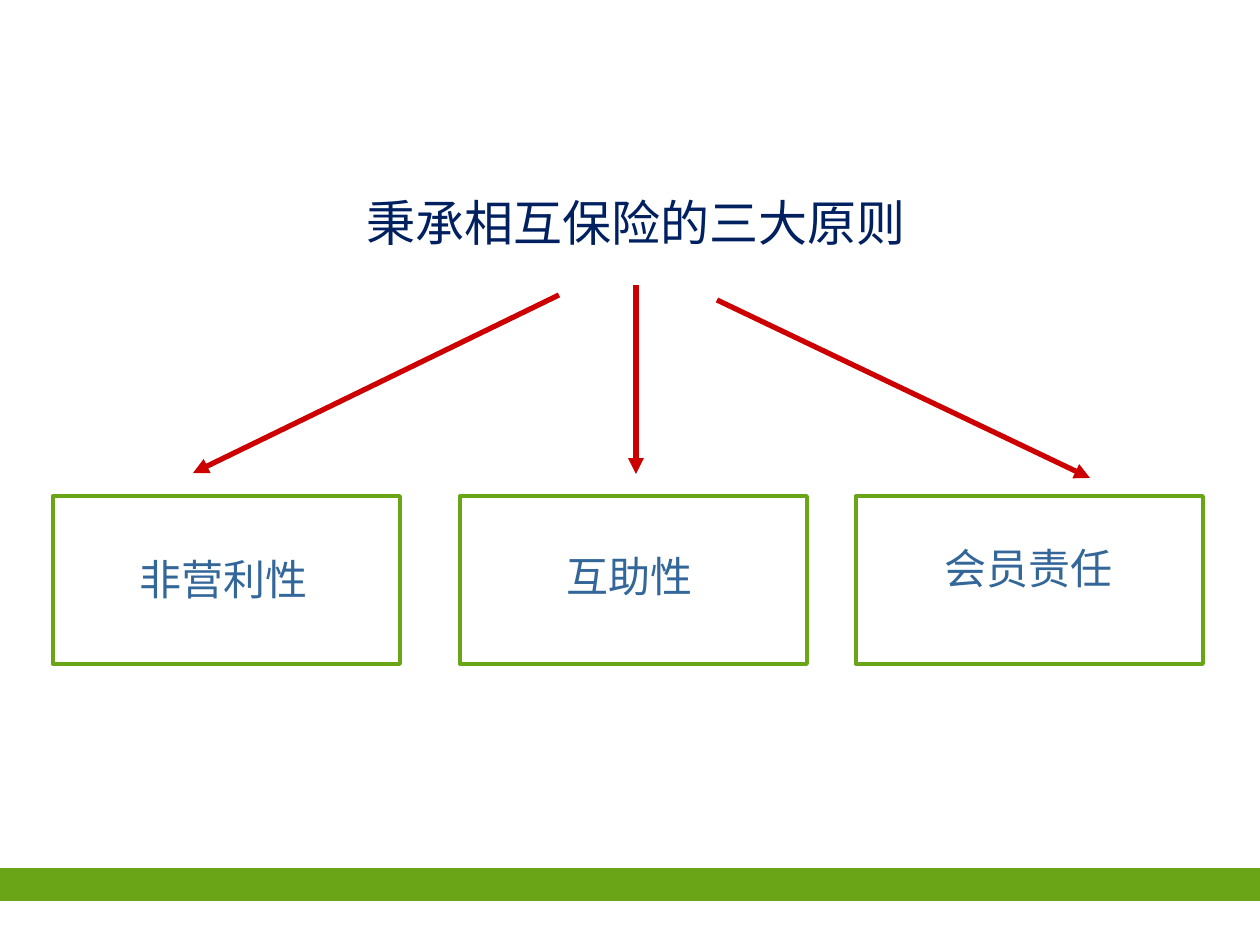
from dataclasses import dataclass

from lxml.etree import SubElement
from pptx import Presentation
from pptx.dml.color import RGBColor as RGB
from pptx.enum.shapes import MSO_CONNECTOR as Connector, MSO_SHAPE as Shape
from pptx.enum.text import MSO_ANCHOR as Anchor, MSO_AUTO_SIZE as AutoSize, PP_ALIGN as Align
from pptx.oxml.ns import qn
from pptx.util import Emu, Pt

PX = 914400 / 126


@dataclass(frozen=True)
class Theme:
    green: RGB = RGB(0x6A, 0xA5, 0x17)
    red: RGB = RGB(0xCC, 0x00, 0x00)
    navy: RGB = RGB(0x00, 0x20, 0x60)
    blue: RGB = RGB(0x33, 0x66, 0x99)
    font: str = "Noto Sans CJK SC"
    title_size: Pt = Pt(28)
    label_size: Pt = Pt(24)
    border: Pt = Pt(2.25)
    arrow: Pt = Pt(3)


THEME = Theme()

SLIDE_SIZE = (1260, 945)
TITLE_BOX = (141, 186, 990, 105)
FOOTER_BOX = (0, 868, 1260, 33)
CARD_TOP, CARD_WIDTH, CARD_HEIGHT = 496, 347, 168

# Card left edge, name, then the label's box relative to its card.
PRINCIPLES = [
    (53, "非营利性", (-3, 51, 347, 63), Align.CENTER),
    (460, "互助性", (94, 48, 262, 63), Align.LEFT),
    (856, "会员责任", (-16, 40, 378, 116), Align.CENTER),
]
ARROWS = [
    ((559, 295), (193, 473)),
    ((636, 285), (636, 474)),
    ((717, 300), (1090, 478)),
]


def emu(*lengths):
    return [Emu(round(length * PX)) for length in lengths]


def write(frame, text, size, color, align):
    """Fill a text frame with one top-anchored line, in the theme font for all scripts."""
    frame.text = text
    frame_format = {"word_wrap": True, "auto_size": AutoSize.NONE,
                    "vertical_anchor": Anchor.TOP}
    for name, value in frame_format.items():
        setattr(frame, name, value)
    paragraph = frame.paragraphs[0]
    paragraph.alignment = align
    run = paragraph.runs[0]
    for name, value in {"name": THEME.font, "size": size, "bold": False}.items():
        setattr(run.font, name, value)
    run.font.color.rgb = color
    SubElement(run.font._element, qn("a:ea"), typeface=THEME.font)


def add_title(slide, box):
    title = slide.shapes.title
    for name, value in zip(("left", "top", "width", "height"), emu(*box)):
        setattr(title, name, value)
    write(title.text_frame, "秉承相互保险的三大原则", THEME.title_size, THEME.navy, Align.CENTER)


def add_footer(slide, box):
    band = slide.shapes.add_shape(Shape.RECTANGLE, *emu(*box))
    band.shadow.inherit = False
    band.fill.solid()
    band.fill.fore_color.rgb = THEME.green
    band.line.fill.background()


def add_principle(slide, box, name, label_box, align):
    left, top, _, _ = box
    label_left, label_top, label_width, label_height = label_box
    card = slide.shapes.add_group_shape().shapes
    label = card.add_textbox(
        *emu(left + label_left, top + label_top, label_width, label_height))
    write(label.text_frame, name, THEME.label_size, THEME.blue, align)
    border = card.add_shape(Shape.RECTANGLE, *emu(*box))
    border.shadow.inherit = False
    border.fill.background()
    border.line.color.rgb = THEME.green
    border.line.width = THEME.border


def add_arrow(slide, start, end):
    arrow = slide.shapes.add_connector(Connector.STRAIGHT, *emu(*start, *end))
    arrow.line.color.rgb = THEME.red
    arrow.line.width = THEME.arrow
    SubElement(arrow.line._get_or_add_ln(), qn("a:tailEnd"), type="triangle")
    SubElement(arrow._element.spPr, qn("a:effectLst"))


def main():
    deck = Presentation()
    deck.slide_width, deck.slide_height = emu(*SLIDE_SIZE)
    slide = deck.slides.add_slide(deck.slide_layouts.get_by_name("Title Only"))
    add_footer(slide, FOOTER_BOX)
    add_title(slide, TITLE_BOX)
    for left, name, label_box, align in PRINCIPLES:
        add_principle(slide, (left, CARD_TOP, CARD_WIDTH, CARD_HEIGHT), name, label_box, align)
    for start, end in ARROWS:
        add_arrow(slide, start, end)
    deck.save("out.pptx")


if __name__ == "__main__":
    main()
